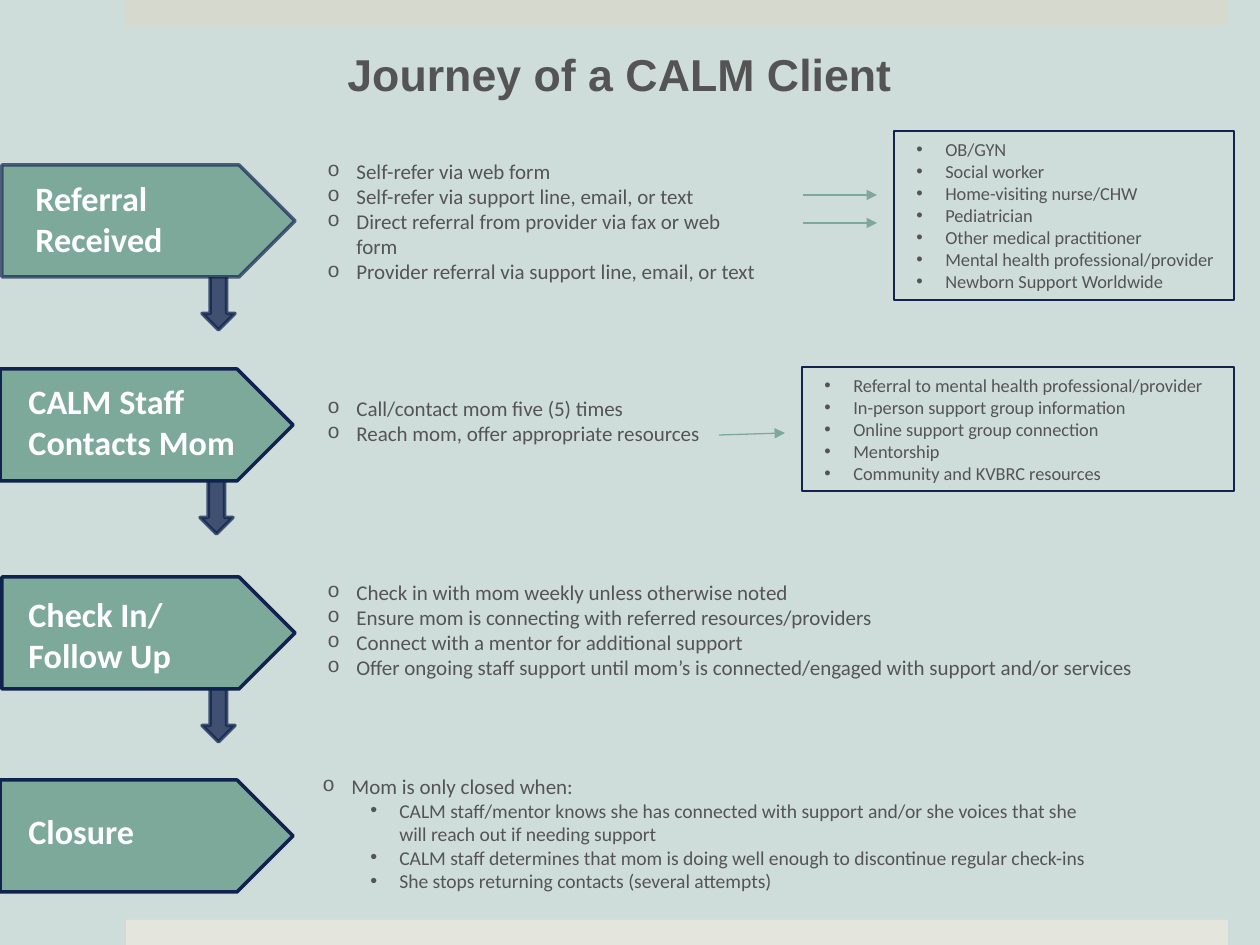
from lxml.etree import SubElement
from pptx import Presentation
from pptx.dml.color import RGBColor
from pptx.enum.shapes import MSO_CONNECTOR, MSO_SHAPE
from pptx.enum.text import MSO_ANCHOR, PP_ALIGN
from pptx.oxml.ns import qn
from pptx.util import Pt

PX = 914400 / 126
COLORS = {
    "background": "CFDDDA", "top_band": "D6D9CD", "bottom_band": "E4E6DE",
    "sage": "7DA99A", "navy": "10224E", "text": "545454", "white": "FFFFFF",
}
FORMATS = {
    "title": {"name": "Arial", "size": Pt(25.5), "bold": True, "color": "text"},
    "stage": {"name": "Calibri", "size": Pt(19.5), "bold": True, "color": "white"},
    "step": {"name": "Calibri", "size": Pt(12), "color": "text"},
    "substep": {"name": "Calibri", "size": Pt(11.2), "color": "text"},
    "detail": {"name": "Calibri", "size": Pt(10.5), "color": "text"},
}
# Left margin in px, bullet character and bullet font
BULLETS = {
    "step": (29, "o", "Courier New"),
    "substep": (77, "•", "Arial"),
    "detail": (39, "•", "Arial"),
}
HANGING = 29

# Pentagon left and top, label box, label
STAGES = [
    ((2, 165), (23, 170, 179, 96), "Referral Received"),
    ((0, 369), (16, 373, 234, 96), "CALM Staff Contacts Mom"),
    ((2, 577), (16, 586, 179, 96), "Check In/ Follow Up"),
    ((0, 780), (16, 804, 179, 54), "Closure"),
]
STEPS = [
    ((315, 152, 462, 169), [
        "Self-refer via web form",
        "Self-refer via support line, email, or text",
        "Direct referral from provider via fax or web form",
        "Provider referral via support line, email, or text"]),
    ((315, 389, 403, 92), [
        "Call/contact mom five (5) times",
        "Reach mom, offer appropriate resources"]),
    ((315, 573, 908, 115), [
        "Check in with mom weekly unless otherwise noted",
        "Ensure mom is connecting with referred resources/providers",
        "Connect with a mentor for additional support",
        "Offer ongoing staff support until mom’s is connected/engaged "
        "with support and/or services"]),
]
CLOSURE_REASONS = [
    "CALM staff/mentor knows she has connected with support and/or she voices "
    "that she will reach out if needing support",
    "CALM staff determines that mom is doing well enough to discontinue regular check-ins",
    "She stops returning contacts (several attempts)",
]
DETAILS = [
    ((894, 131, 340, 169), [
        "OB/GYN", "Social worker", "Home-visiting nurse/CHW", "Pediatrician",
        "Other medical practitioner", "Mental health professional/provider",
        "Newborn Support Worldwide"]),
    ((802, 367, 432, 124), [
        "Referral to mental health professional/provider",
        "In-person support group information", "Online support group connection",
        "Mentorship", "Community and KVBRC resources"]),
]
DETAIL_ARROWS = [(803, 195, 877, 195), (803, 223, 877, 223), (719, 435, 785, 433)]


def emu(*lengths):
    return [round(length * PX) for length in lengths]


def rgb(color):
    return RGBColor.from_string(COLORS[color])


def set_alpha(element, percent):
    """Make every solid colour below an element partly transparent."""
    for color in element.iter(qn("a:srgbClr")):
        SubElement(color, qn("a:alpha"), val=str(percent * 1000))


class JourneySlide:
    def __init__(self, deck):
        self.slide = deck.slides.add_slide(deck.slide_layouts[6])
        fill = self.slide.background.fill
        fill.solid()
        fill.fore_color.rgb = rgb("background")

    def block(self, preset, box, fill=None, line=None, weight=2.0):
        shape = self.slide.shapes.add_shape(preset, *emu(*box))
        shape.shadow.inherit = False
        if fill:
            shape.fill.solid()
            shape.fill.fore_color.rgb = rgb(fill)
        else:
            shape.fill.background()
        if line:
            shape.line.color.rgb = rgb(line)
            shape.line.width = Pt(weight)
        else:
            shape.line.fill.background()
        return shape

    def set_text(self, shape, items, anchor=MSO_ANCHOR.TOP, align=PP_ALIGN.LEFT):
        """Fill a shape with (text, format name) paragraphs."""
        frame = shape.text_frame
        frame.word_wrap = True
        frame.vertical_anchor = anchor
        for index, (text, style) in enumerate(items):
            paragraph = frame.add_paragraph() if index else frame.paragraphs[0]
            paragraph.alignment = align
            run = paragraph.add_run()
            run.text = text
            for key, value in FORMATS[style].items():
                if key == "color":
                    run.font.color.rgb = rgb(value)
                else:
                    setattr(run.font, key, value)
            if style in BULLETS:
                self.bullet(paragraph, *BULLETS[style])

    def bullet(self, paragraph, margin, char, font):
        properties = paragraph._p.get_or_add_pPr()
        left, hanging = emu(margin, HANGING)
        properties.set("marL", str(left))
        properties.set("indent", str(-hanging))
        SubElement(properties, qn("a:buFont"), typeface=font)
        SubElement(properties, qn("a:buChar"), char=char)

    def text(self, box, items, **layout):
        self.set_text(self.slide.shapes.add_textbox(*emu(*box)), items, **layout)

    def arrow(self, ends):
        connector = self.slide.shapes.add_connector(MSO_CONNECTOR.STRAIGHT, *emu(*ends))
        connector.line.color.rgb = rgb("sage")
        connector.line.width = Pt(0.75)
        properties = connector._element.spPr
        SubElement(properties.find(qn("a:ln")), qn("a:tailEnd"), type="triangle")
        SubElement(properties, qn("a:effectLst"))

    def stage(self, left, top, faded_line, has_next):
        """Draw a stage pentagon, over the arrow that leads to the next one."""
        if has_next:
            down_arrow = self.block(MSO_SHAPE.DOWN_ARROW, (left + 200, top + 101, 33, 64),
                                    "navy", "navy")
            set_alpha(down_arrow._element.spPr, 75)
        pentagon = self.block(MSO_SHAPE.PENTAGON, (left, top, 293, 112), "sage", "navy")
        if faded_line:
            set_alpha(pentagon._element.spPr.find(qn("a:ln")), 68)


def main():
    deck = Presentation()
    deck.slide_width, deck.slide_height = emu(1260, 945)
    journey = JourneySlide(deck)

    for top, color in ((0, "top_band"), (920, "bottom_band")):
        journey.block(MSO_SHAPE.RECTANGLE, (126, top, 1102, 25), color)

    for index, ((left, top), _, _) in reversed(list(enumerate(STAGES))):
        journey.stage(left, top, index == 0, index < len(STAGES) - 1)
    for _, box, label in STAGES:
        journey.text(box, [(label, "stage")], anchor=MSO_ANCHOR.MIDDLE)

    journey.text((258, 40, 723, 67), [("Journey of a CALM Client", "title")],
                 anchor=MSO_ANCHOR.MIDDLE, align=PP_ALIGN.CENTER)

    for box, lines in STEPS:
        journey.text(box, [(line, "step") for line in lines])
    journey.text((310, 767, 806, 134), [("Mom is only closed when:", "step")]
                 + [(reason, "substep") for reason in CLOSURE_REASONS])

    for box, lines in DETAILS:
        frame = journey.block(MSO_SHAPE.RECTANGLE, box, line="navy", weight=0.75)
        journey.set_text(frame, [(line, "detail") for line in lines], anchor=MSO_ANCHOR.MIDDLE)
    for ends in DETAIL_ARROWS:
        journey.arrow(ends)

    deck.save("out.pptx")


if __name__ == "__main__":
    main()
